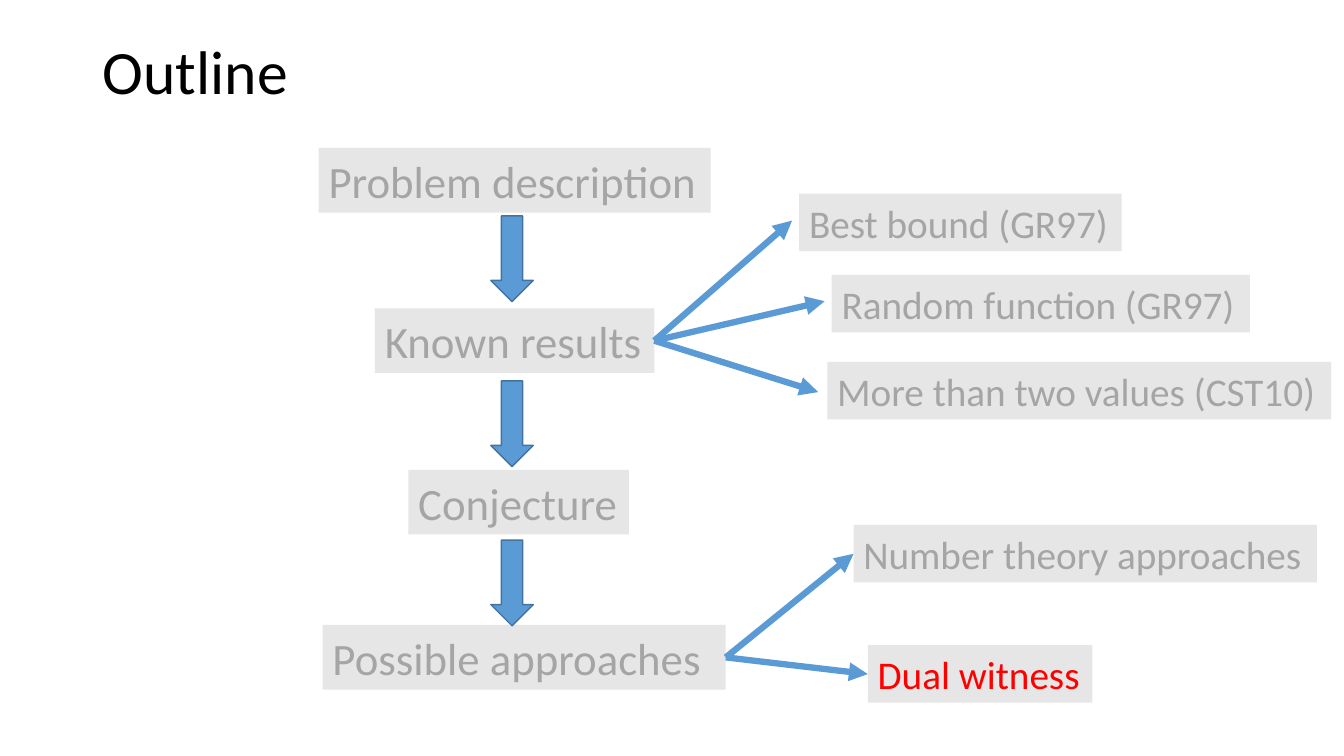
"""Build the outline slide: a chain of topics with branches."""
from dataclasses import dataclass

from lxml.etree import SubElement
from pptx import Presentation
from pptx.dml.color import RGBColor
from pptx.enum.shapes import MSO_CONNECTOR as Link, MSO_SHAPE as Kind
from pptx.enum.text import MSO_ANCHOR as Anchor, PP_ALIGN as Align
from pptx.oxml.ns import qn
from pptx.shapes.autoshape import Shape
from pptx.shapes.shapetree import SlideShapes as Shapes
from pptx.text.text import TextFrame
from pptx.util import Cm, Pt

BLACK = RGBColor(0x00, 0x00, 0x00)
PALE = RGBColor(0xE7, 0xE6, 0xE6)
GRAY = RGBColor(0xA5, 0xA5, 0xA5)
RED = RGBColor(0xFF, 0x00, 0x00)
BLUE = RGBColor(0x5B, 0x9B, 0xD5)
NAVY = RGBColor(0x43, 0x73, 0x9E)
FONT = "Calibri"
RIGHT, LEFT = 3, 1


@dataclass(frozen=True)
class Topic:
    """A labelled box, in centimetres."""
    text: str
    left: float
    top: float
    width: float
    height: float = 1.63
    size: int = 32
    color: RGBColor = GRAY


@dataclass(frozen=True)
class Branch:
    """A side topic, its parent and the free tip of its arrow, if any."""
    parent: str
    topic: Topic
    tip: tuple[float, float] | None = None


def side(text: str, left: float, top: float, width: float,
         color: RGBColor = GRAY) -> Topic:
    """Describe a smaller box at the right."""
    return Topic(text, left, top, width, 1.45, 28, color)


CHAIN = [
    Topic("Problem description", 8.03, 3.73, 9.88),
    Topic("Known results", 9.45, 7.77, 7.04),
    Topic("Conjecture", 10.29, 11.84, 5.56),
    Topic("Possible approaches", 8.13, 15.75, 10.16),
]
STEPS = [5.44, 9.6, 13.61]
SIDES = [
    Branch("Known results", side("Best bound (GR97)", 20.14, 4.88, 8.13), (19.96, 5.56)),
    Branch("Known results", side("Random function (GR97)", 20.96, 6.93, 10.54), (20.78, 7.59)),
    Branch("Known results", side("More than two values (CST10)", 20.85, 9.12, 12.7),
           (20.62, 9.88)),
    Branch("Possible approaches", side("Number theory approaches", 21.51, 13.23, 11.68)),
    Branch("Possible approaches", side("Dual witness", 21.87, 16.26, 5.66, RED)),
]


def write(frame: TextFrame, text: str, size: int, color: RGBColor) -> None:
    """Add one left-aligned run to a frame."""
    frame.word_wrap = True
    frame.vertical_anchor = Anchor.MIDDLE
    para = frame.paragraphs[0]
    para.alignment = Align.LEFT
    run = para.add_run()
    run.text = text
    run.font.name = FONT
    run.font.size = Pt(size)
    run.font.color.rgb = color


def add_box(shapes: Shapes, topic: Topic) -> Shape:
    """Draw a topic box."""
    box = shapes.add_shape(Kind.RECTANGLE, Cm(topic.left), Cm(topic.top),
                           Cm(topic.width), Cm(topic.height))
    box.shadow.inherit = False
    box.fill.solid()
    box.fill.fore_color.rgb = PALE
    box.line.fill.background()
    box.text_frame.margin_right = 0
    write(box.text_frame, topic.text, topic.size, topic.color)
    return box


def add_step(shapes: Shapes, top: float) -> None:
    """Draw a block arrow between two topics."""
    step = shapes.add_shape(Kind.DOWN_ARROW, Cm(12.37), Cm(top), Cm(1.07), Cm(2.16))
    step.shadow.inherit = False
    step.fill.solid()
    step.fill.fore_color.rgb = BLUE
    step.line.color.rgb = NAVY
    step.line.width = Pt(1)


def add_link(shapes: Shapes, start: Shape, end: Shape,
             tip: tuple[float, float] | None) -> None:
    """Draw an arrow from a topic to its branch."""
    x, y = (Cm(tip[0]), Cm(tip[1])) if tip else (end.left, end.top + end.height // 2)
    link = shapes.add_connector(Link.STRAIGHT, start.left + start.width,
                                start.top + start.height // 2, x, y)
    link.begin_connect(start, RIGHT)
    if tip is None:
        link.end_connect(end, LEFT)
    link.line.color.rgb = BLUE
    link.line.width = Pt(4.5)
    props = link.line.fill
    props.solid()
    props.fore_color.rgb = BLUE
    SubElement(link.line._get_or_add_ln(), qn("a:tailEnd"), type="triangle")
    SubElement(link._element.spPr, qn("a:effectLst"))


def main() -> None:
    """Draw the slide and save it."""
    deck = Presentation()
    deck.slide_width, deck.slide_height = Cm(33.87), Cm(19.05)
    shapes = deck.slides.add_slide(deck.slide_layouts[6]).shapes
    title = shapes.add_textbox(Cm(2.34), Cm(0.05), Cm(29.21), Cm(3.68))
    write(title.text_frame, "Outline", 44, BLACK)
    title.text_frame.paragraphs[0].line_spacing = 0.9
    boxes = {topic.text: add_box(shapes, topic) for topic in CHAIN}
    for top in STEPS:
        add_step(shapes, top)
    for branch in SIDES:
        box = add_box(shapes, branch.topic)
        add_link(shapes, boxes[branch.parent], box, branch.tip)
    deck.save("out.pptx")


if __name__ == "__main__":
    main()
